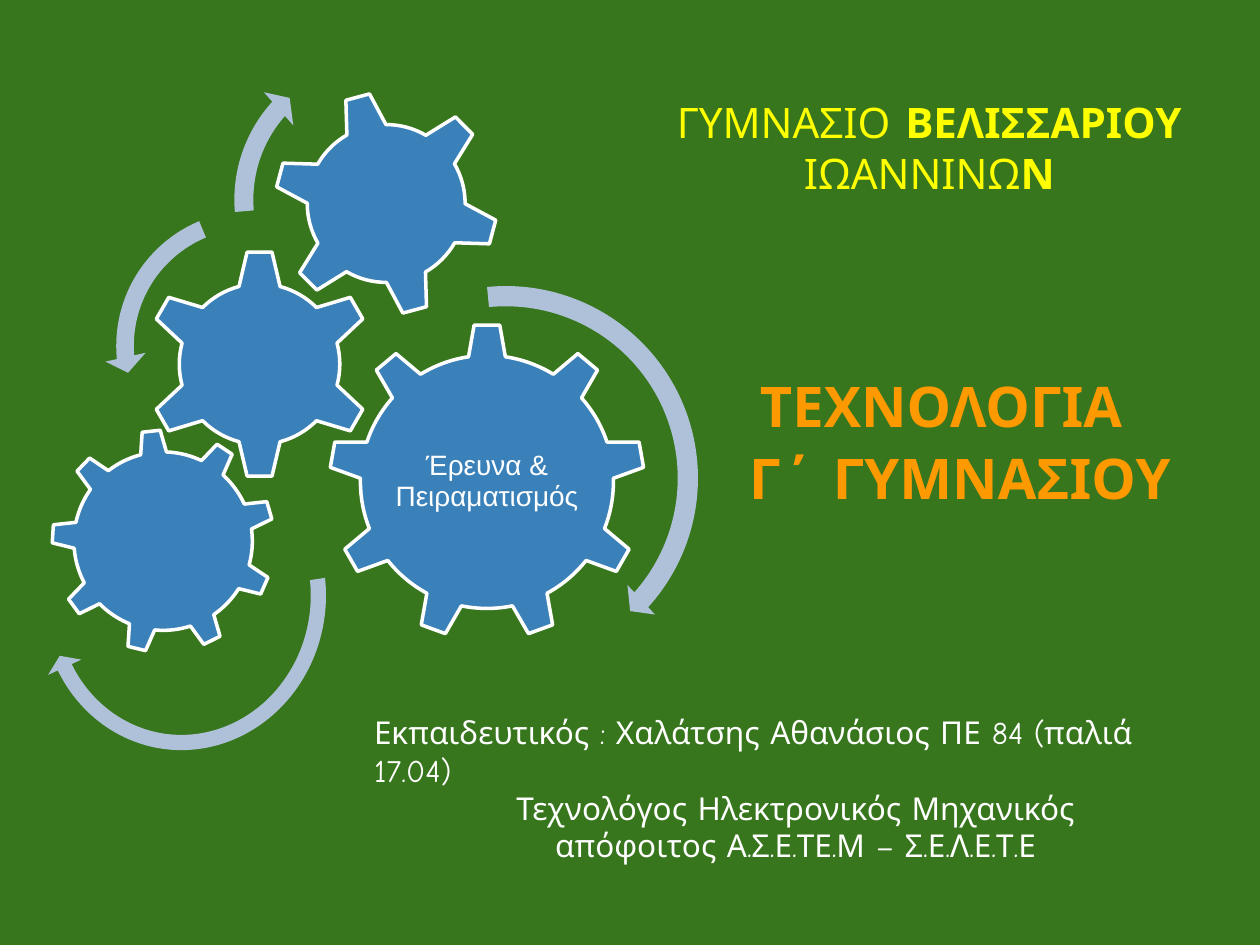
from pptx import Presentation
from pptx.dml.color import RGBColor
from pptx.enum.shapes import MSO_SHAPE as SHAPE
from pptx.enum.text import MSO_ANCHOR as ANCHOR, PP_ALIGN as ALIGN
from pptx.util import Inches, Pt

GREEN = RGBColor(0x38, 0x76, 0x1D)
YELLOW = RGBColor(0xFF, 0xFF, 0x00)
ORANGE = RGBColor(0xFF, 0x99, 0x00)
WHITE = RGBColor(0xFF, 0xFF, 0xFF)
GEAR_BLUE = RGBColor(0x3A, 0x81, 0xBA)
ARROW_BLUE = RGBColor(0xAF, 0xC1, 0xD9)
FONT = "Comic Neue"

# The slide is a grid of 100 columns and 75 rows of square cells
CELL = Inches(10) // 100


def cells(*lengths):
    return [round(length * CELL) for length in lengths]


def add_text_frame(slide, box, margins=(1, 0.5, 1, 0.5)):
    frame = slide.shapes.add_textbox(*cells(*box)).text_frame
    frame.word_wrap = True
    (frame.margin_left, frame.margin_top,
     frame.margin_right, frame.margin_bottom) = cells(*margins)
    return frame


def add_lines(frame, lines, size, color, align=ALIGN.CENTER, font=FONT, bold=None):
    """Write one paragraph per line; a line is a list of (text, bold) runs or a string."""
    for index, line in enumerate(lines):
        paragraph = frame.add_paragraph() if index else frame.paragraphs[0]
        paragraph.alignment = align
        paragraph.font.size, paragraph.font.name = Pt(size), font
        paragraph.font.color.rgb = color
        paragraph.font.bold = bold
        for text, run_bold in [(line, None)] if isinstance(line, str) else line:
            run = paragraph.add_run()
            run.text = text
            if run_bold is not None:
                run.font.bold = run_bold
    return frame.paragraphs


def add_part(slide, kind, box, fill, rotation=0, outlined=False, adjustments=()):
    part = slide.shapes.add_shape(kind, *cells(*box))
    part.shadow.inherit = False
    part.rotation = rotation
    part.fill.solid()
    part.fill.fore_color.rgb = fill
    if outlined:
        part.line.color.rgb = WHITE
        part.line.width = Pt(2)
    else:
        part.line.fill.background()
    for index, value in enumerate(adjustments):
        part.adjustments[index] = value


def add_gears(slide, origin, gears, arrows):
    """Place gears and their turning arrows relative to the origin."""
    left, top = origin
    for kind, (x, y, size), rotation in gears:
        add_part(slide, kind, (left + x, top + y, size, size), GEAR_BLUE,
                 rotation, outlined=True)
    for kind, (x, y, width, height), rotation, adjustments in arrows:
        add_part(slide, kind, (left + x, top + y, width, height), ARROW_BLUE,
                 rotation, adjustments=adjustments)


def add_gear_label(slide, box):
    frame = add_text_frame(slide, box, (3, 0.2, 3, 0.2))
    frame.vertical_anchor = ANCHOR.MIDDLE
    label, = add_lines(frame, ["Έρευνα & Πειραματισμός"], 16, WHITE, font="Arial")
    label.line_spacing = 0.9


def add_school(slide, box):
    frame = add_text_frame(slide, box, (1, 4.5, 1, 0.5))
    add_lines(frame, [
        [("ΓΥΜΝΑΣΙΟ", False), (" ΒΕΛΙΣΣΑΡΙΟΥ", True)],
        [("ΙΩΑΝΝΙΝΩ", False), ("Ν", True)],
    ], 24, YELLOW)


def add_course(slide, box):
    frame = add_text_frame(slide, box, (1, 0.5, 4, 0.5))
    subject, grade = add_lines(frame, ["ΤΕΧΝΟΛΟΓΙΑ", "Γ΄ ΓΥΜΝΑΣΙΟΥ"], 32, ORANGE,
                               bold=True)
    subject.line_spacing = grade.line_spacing = 0.9
    grade.space_before = Pt(6.4)
    # The second line stands a little to the right of the first
    grade._p.get_or_add_pPr().set("marL", str(3 * CELL))


def add_teacher(slide, box):
    frame = add_text_frame(slide, box)
    teacher, *_ = add_lines(frame, [
        "Εκπαιδευτικός : Χαλάτσης Αθανάσιος ΠΕ 84 (παλιά 17.04)",
        "Τεχνολόγος Ηλεκτρονικός Μηχανικός",
        "απόφοιτος Α.Σ.Ε.ΤΕ.Μ – Σ.Ε.Λ.Ε.Τ.Ε",
    ], 18, WHITE)
    teacher.alignment = ALIGN.LEFT


def main():
    prs = Presentation()
    prs.slide_width, prs.slide_height = cells(100, 75)
    slide = prs.slides.add_slide(prs.slide_layouts[6])
    slide.background.fill.solid()
    slide.background.fill.fore_color.rgb = GREEN

    # Texts
    add_school(slide, (47.5, 3.2, 52.5, 14.6))
    add_course(slide, (52.4, 29.6, 47.6, 12.4))
    add_teacher(slide, (28.7, 56.1, 68.9, 10.5))

    # Three upper gears
    add_gears(slide, (8.3, 3.3), [
        (SHAPE.GEAR_9, (17.8, 22.4, 25.1), 0),
        (SHAPE.GEAR_6, (3.2, 16.5, 18.2), 0),
        (SHAPE.GEAR_6, (13.4, 3.9, 17.9), 345),
    ], [
        (SHAPE.CIRCULAR_ARROW, (15.8, 18.6, 32.1, 32.1), 0,
         (0.05, 2.99, 25.16, 158.63, 0.05)),
        (SHAPE.LEFT_CIRCULAR_ARROW, (0, 12.5, 23.3, 23.3), 0,
         (0.06, 4.3, 104.89, 148.38, 0.07)),
        (SHAPE.CIRCULAR_ARROW, (9.3, 0, 25.1, 25.1), 0,
         (0.06, 3.94, 133.14, 105.08, 0.07)),
    ])
    add_gear_label(slide, (26.1, 25.7, 25.1, 25.1))

    # Lower gear
    add_gears(slide, (1.7, 34.1), [
        (SHAPE.GEAR_9, (2.4, 0, 17.7), 353.8),
    ], [
        (SHAPE.CIRCULAR_ARROW, (0, 1.3, 25.8, 24.2), 97.8,
         (0.05, 3.13, 31.33, 152.34, 0.06)),
    ])
    prs.save("out.pptx")


if __name__ == "__main__":
    main()
